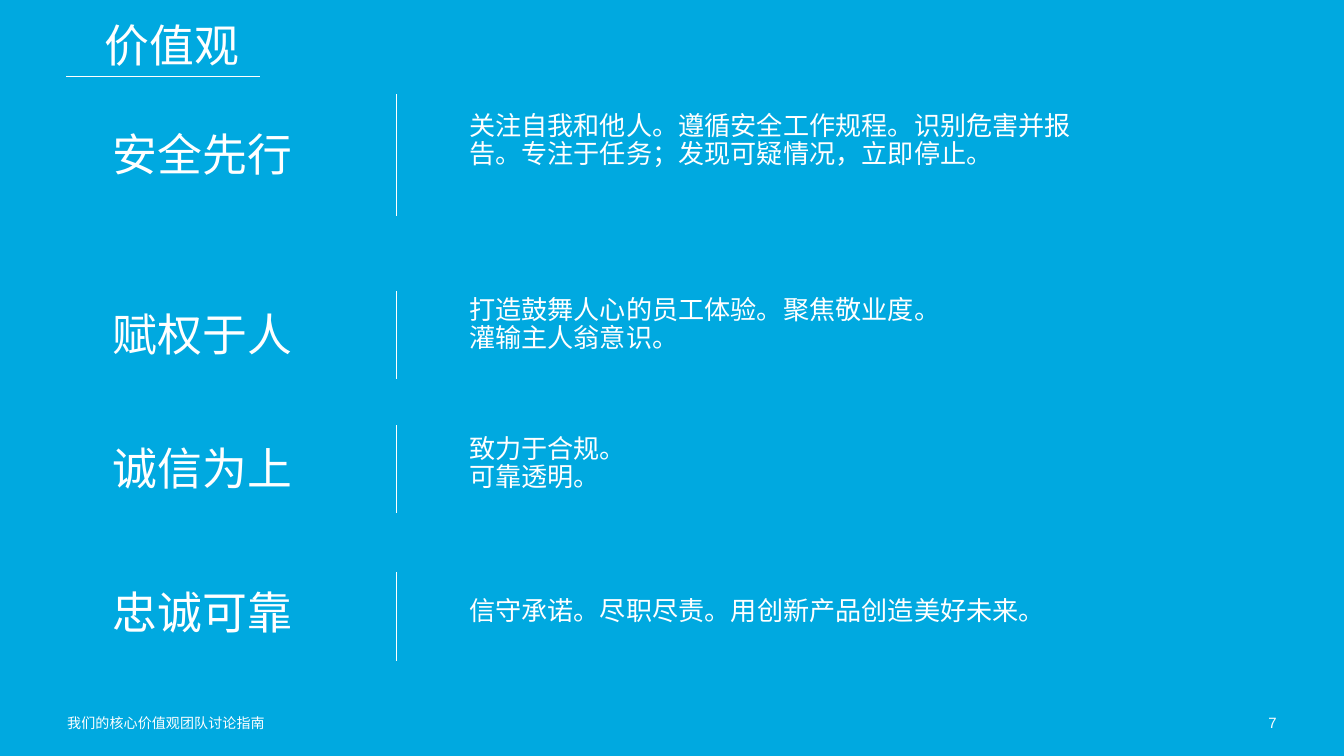
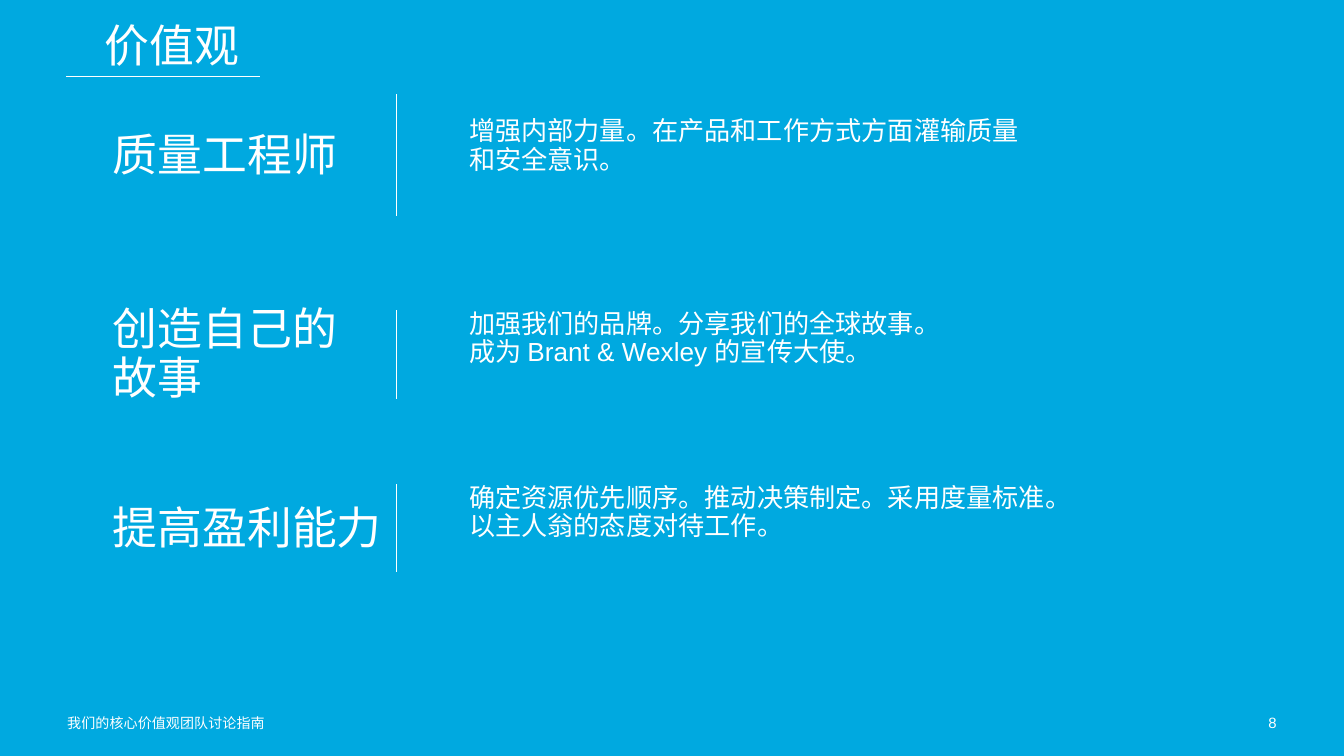
import copy
import pptx
import pptx.dml.color
import pptx.enum.shapes
import pptx.enum.text
import pptx.oxml
import pptx.oxml.ns
import pptx.util

Inches = pptx.util.Inches
ALIGN = pptx.enum.text.PP_ALIGN
ANCHOR = pptx.enum.text.MSO_ANCHOR
BLUE = "00A9E0"
WHITE = "FFFFFF"
SANS = "Arial"
NARROW = "Arial Narrow"
LABEL_X, RULE_X, BODY_X = 0.84, 2.95, 3.49

VALUES = {
    7: [
        dict(label="安全先行", name=(0.71, 2.1, 0.92), bar=(0.71, 0.89),
             area=(0.84, 4.67, 1.12),
             body="关注自我和他人。遵循安全工作规程。识别危害并报告。专注于任务；发现可疑情况，立即停止。"),
        dict(label="赋权于人", name=(2.17, 2.1, 0.67), bar=(2.17, 0.64),
             area=(2.21, 3.56, 0.79),
             body="打造鼓舞人心的员工体验。聚焦敬业度。灌输主人翁意识。"),
        dict(label="诚信为上", name=(3.17, 2.1, 0.67), bar=(3.17, 0.64),
             area=(3.24, 4.59, 0.67), body="致力于合规。\n可靠透明。"),
        dict(label="忠诚可靠", name=(4.24, 2.1, 0.67), bar=(4.26, 0.65),
             area=(4.45, 5.45, 0.67),
             body="信守承诺。尽职尽责。用创新产品创造美好未来。"),
    ],
    8: [
        dict(label="质量工程师", name=(0.71, 2.1, 0.92), bar=(0.71, 0.89),
             area=(0.88, 4.27, 1.12),
             body="增强内部力量。在产品和工作方式方面灌输质量和安全意识。"),
        dict(label="创造自己的故事", name=(2.31, 1.77, 0.67), bar=(2.31, 0.65),
             area=(2.31, 3.69, 0.79),
             body="加强我们的品牌。分享我们的全球故事。成为 Brant & Wexley 的宣传大使。"),
        dict(label="提高盈利能力", name=(3.61, 2.1, 0.67), bar=(3.61, 0.64),
             area=(3.61, 4.59, 0.67),
             body="确定资源优先顺序。推动决策制定。采用度量标准。以主人翁的态度对待工作。"),
    ],
}


def paint(color, code):
    color.rgb = pptx.dml.color.RGBColor.from_string(code)


def write(slide, text, x, y, w, h, size=14, font=SANS, align=ALIGN.LEFT,
          anchor=ANCHOR.TOP, space=0.9, inset=0, wrap=True):
    box = slide.shapes.add_textbox(Inches(x), Inches(y), Inches(w), Inches(h))
    frame = box.text_frame
    frame.word_wrap = wrap
    frame.vertical_anchor = anchor
    frame.margin_left = frame.margin_right = frame.margin_bottom = 0
    frame.margin_top = Inches(inset)
    para = frame.paragraphs[0]
    para.text = text
    para.alignment = align
    para.line_spacing = space
    for run in para.runs:
        run.font.size = pptx.util.Pt(size)
        run.font.name = font
        paint(run.font.color, WHITE)
    for gap in para._p.findall(pptx.oxml.ns.qn("a:br")):
        gap.append(copy.deepcopy(para.runs[0]._r.rPr))


def rule(slide, x, y, w=0, h=0):
    line = slide.shapes.add_connector(
        pptx.enum.shapes.MSO_CONNECTOR.STRAIGHT,
        Inches(x), Inches(y), Inches(x + w), Inches(y + h))
    paint(line.line.color, WHITE)
    line.line.width = pptx.util.Pt(1)
    props = line._element.spPr
    props.find(pptx.oxml.ns.qn("a:ln")).set("cap", "sq")
    props.append(pptx.oxml.parse_xml(
        "<a:effectLst %s/>" % pptx.oxml.ns.nsdecls("a")))


def frame(slide, page):
    fill = slide.background.fill
    fill.solid()
    paint(fill.fore_color, BLUE)
    write(slide, "我们的核心价值观团队讨论指南", 0.5, 5.3, 4.35, 0.2,
          size=7.5, font=NARROW, space=1, inset=0.02)
    write(slide, str(page), 9, 5.3, 0.5, 0.2,
          size=8, align=ALIGN.RIGHT, space=1, inset=0.01)


def head(slide):
    write(slide, "价值观", 0, 0, 2.56, 0.71, size=24, font=NARROW,
          align=ALIGN.CENTER, anchor=ANCHOR.MIDDLE)
    rule(slide, 0.5, 0.57, w=1.43)


def value(slide, label, name, bar, area, body):
    write(slide, body, BODY_X, *area)
    write(slide, label, LABEL_X, *name, size=24, font=NARROW,
          anchor=ANCHOR.MIDDLE)
    rule(slide, RULE_X, bar[0], h=bar[1])


def main():
    deck = pptx.Presentation()
    deck.slide_width = Inches(10)
    deck.slide_height = Inches(10 * 9 / 16)
    for page, rows in VALUES.items():
        slide = deck.slides.add_slide(deck.slide_layouts[6])
        frame(slide, page)
        for row in rows[1:] + rows[:1]:
            value(slide, **row)
        head(slide)
    deck.save("out.pptx")


if __name__ == "__main__":
    main()
